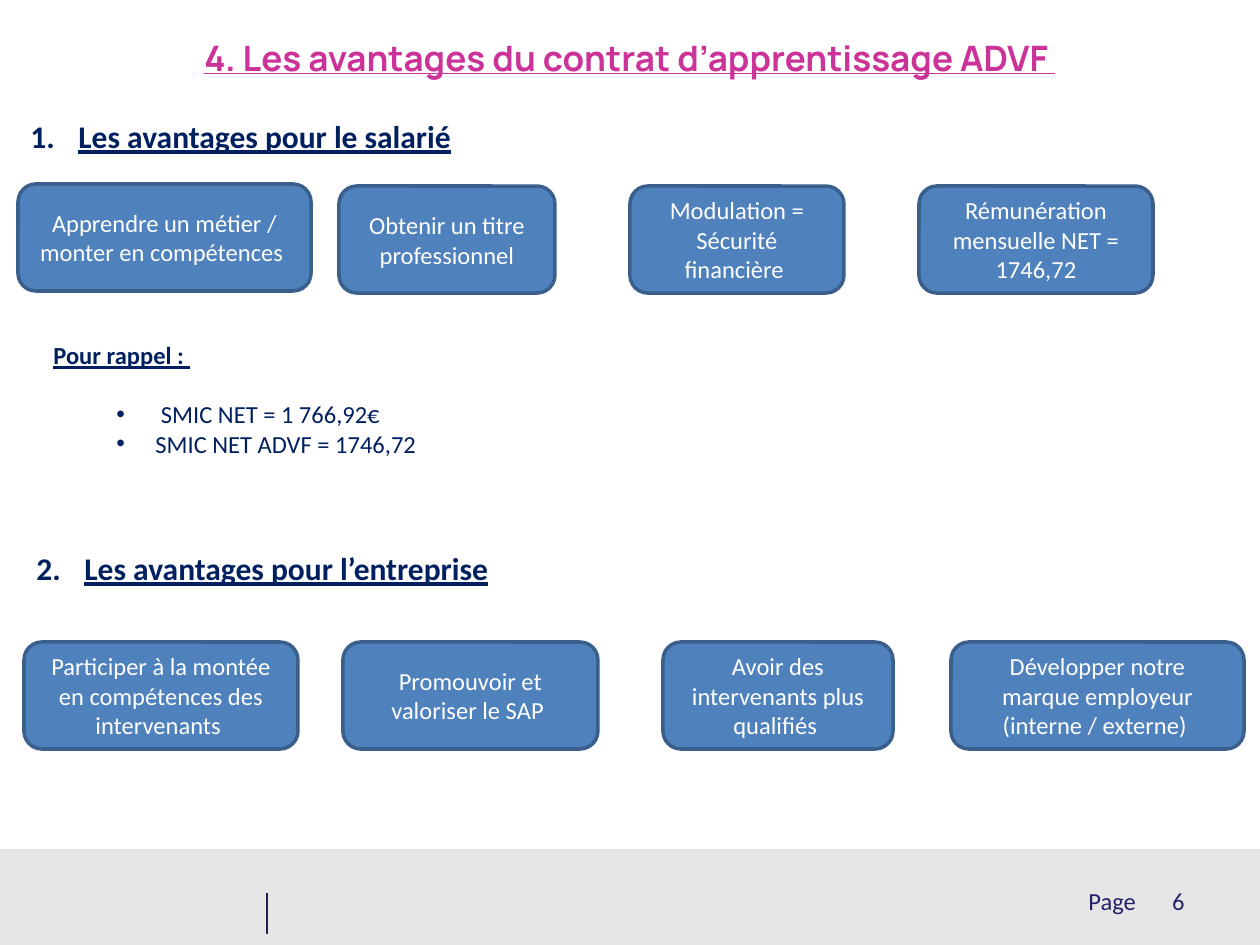
from pptx import Presentation
from pptx.dml.color import RGBColor
from pptx.enum.shapes import MSO_CONNECTOR as Connector, MSO_SHAPE as Shape
from pptx.enum.text import MSO_ANCHOR as Anchor, PP_ALIGN as Align
from pptx.oxml.ns import qn
from pptx.util import Pt
from lxml.etree import SubElement

PX = 914400 / 126
COLORS = {"title": "CC3399", "navy": "002060", "box": "4F81BD", "edge": "3A5F8C",
          "white": "FFFFFF", "band": "E6E6E6", "page": "242268", "rule": "211F52"}
BENEFIT_HEIGHT = 107


def emu(*lengths):
    return [round(length * PX) for length in lengths]


def rgb(name):
    return RGBColor.from_string(COLORS[name])


class SlideBuilder:
    """Holds the style and the current slide, and draws each kind of element."""

    def __init__(self, slide, font="Calibri", size=14):
        self.slide = slide
        self.font = font
        self.size = size

    def style(self, paragraph, color, size=None, font=None, strong=False, align=Align.LEFT):
        paragraph.alignment = align
        paragraph.font.name = font or self.font
        paragraph.font.size = Pt(size or self.size)
        paragraph.font.color.rgb = rgb(color)
        paragraph.font.bold = strong
        paragraph.font.underline = strong

    def mark(self, paragraph, margin, hanging, typeface, kind, **attributes):
        properties = paragraph._p.get_or_add_pPr()
        left, indent = emu(margin, -hanging)
        properties.set("marL", str(left))
        properties.set("indent", str(indent))
        SubElement(properties, qn("a:buFont")).set("typeface", typeface)
        SubElement(properties, qn(f"a:{kind}"), attributes)

    def text(self, bounds, words, color, wrap=True, **style):
        frame = self.slide.shapes.add_textbox(*emu(*bounds)).text_frame
        frame.word_wrap = wrap
        frame.text = words
        self.style(frame.paragraphs[0], color, **style)
        return frame

    def heading(self, bounds, number, words):
        frame = self.slide.shapes.add_textbox(*emu(*bounds)).text_frame
        frame.word_wrap = True
        heading = frame.paragraphs[0]
        heading.text = words
        self.mark(heading, 48, 48, "+mj-lt", "buAutoNum", type="arabicPeriod", startAt=str(number))
        self.style(heading, "navy", size=18, strong=True)

    def reminder(self, bounds, title, items):
        frame = self.text(bounds, title, "navy", strong=True)
        frame.paragraphs[0].space_after = Pt(17)
        for item in items:
            bullet = frame.add_paragraph()
            bullet.text = item
            bullet.level = 1
            self.mark(bullet, 102, 39, "Arial", "buChar", char="•")
            self.style(bullet, "navy")

    def shape(self, kind, bounds, fill):
        shape = self.slide.shapes.add_shape(kind, *emu(*bounds))
        shape.shadow.inherit = False
        shape.fill.solid()
        shape.fill.fore_color.rgb = rgb(fill)
        shape.line.fill.background()
        return shape

    def benefit(self, left, top, width, words):
        box = self.shape(Shape.ROUNDED_RECTANGLE, (left, top, width, BENEFIT_HEIGHT), "box")
        box.line.color.rgb = rgb("edge")
        box.line.width = Pt(2)
        frame = box.text_frame
        frame.word_wrap = True
        frame.vertical_anchor = Anchor.MIDDLE
        frame.text = words
        for paragraph in frame.paragraphs:
            self.style(paragraph, "white", align=Align.CENTER)

    def line(self, x1, y1, x2, y2, color):
        rule = self.slide.shapes.add_connector(Connector.STRAIGHT, *emu(x1, y1, x2, y2))
        rule.line.color.rgb = rgb(color)
        rule.line.width = Pt(1)
        SubElement(rule._element.spPr, qn("a:effectLst"))


def main():
    deck = Presentation()
    deck.slide_width, deck.slide_height = emu(1260, 945)
    page = SlideBuilder(deck.slides.add_slide(deck.slide_layouts[6]))

    page.shape(Shape.RECTANGLE, (0, 849, 1260, 96), "band")
    page.text((1076, 880, 76, 50), "Page", "page")
    page.text((988, 880, 209, 50), "6", "page", align=Align.RIGHT)
    page.line(267, 893, 267, 934, "rule")

    page.text((0, 30, 1260, 55), "4. Les avantages du contrat d’apprentissage ADVF ", "title",
              size=20, font="Manrope", strong=True, align=Align.CENTER)
    page.heading((18, 111, 1203, 50), 1, "Les avantages pour le salarié")
    page.heading((24, 543, 488, 50), 2, "Les avantages pour l’entreprise")
    page.reminder((41, 334, 1157, 161), "Pour rappel : ",
                  [" SMIC NET = 1 766,92€", "SMIC NET ADVF = 1746,72"])

    employee_benefits = [
        (18, 184, 293, "Apprendre un métier / monter en compétences "),
        (339, 186, 216, "Obtenir un titre professionnel"),
        (630, 186, 214, "Modulation = Sécurité financière "),
        (919, 186, 234, "Rémunération mensuelle NET =\n1746,72"),
    ]
    company_benefits = [
        (24, 642, 274, "Participer à la montée en compétences des intervenants "),
        (343, 642, 255, "Promouvoir et valoriser le SAP "),
        (663, 642, 230, "Avoir des intervenants plus qualifiés "),
        (951, 642, 293, "Développer notre marque employeur (interne / externe) "),
    ]
    for benefit in employee_benefits + company_benefits:
        page.benefit(*benefit)

    deck.save("out.pptx")


if __name__ == "__main__":
    main()
